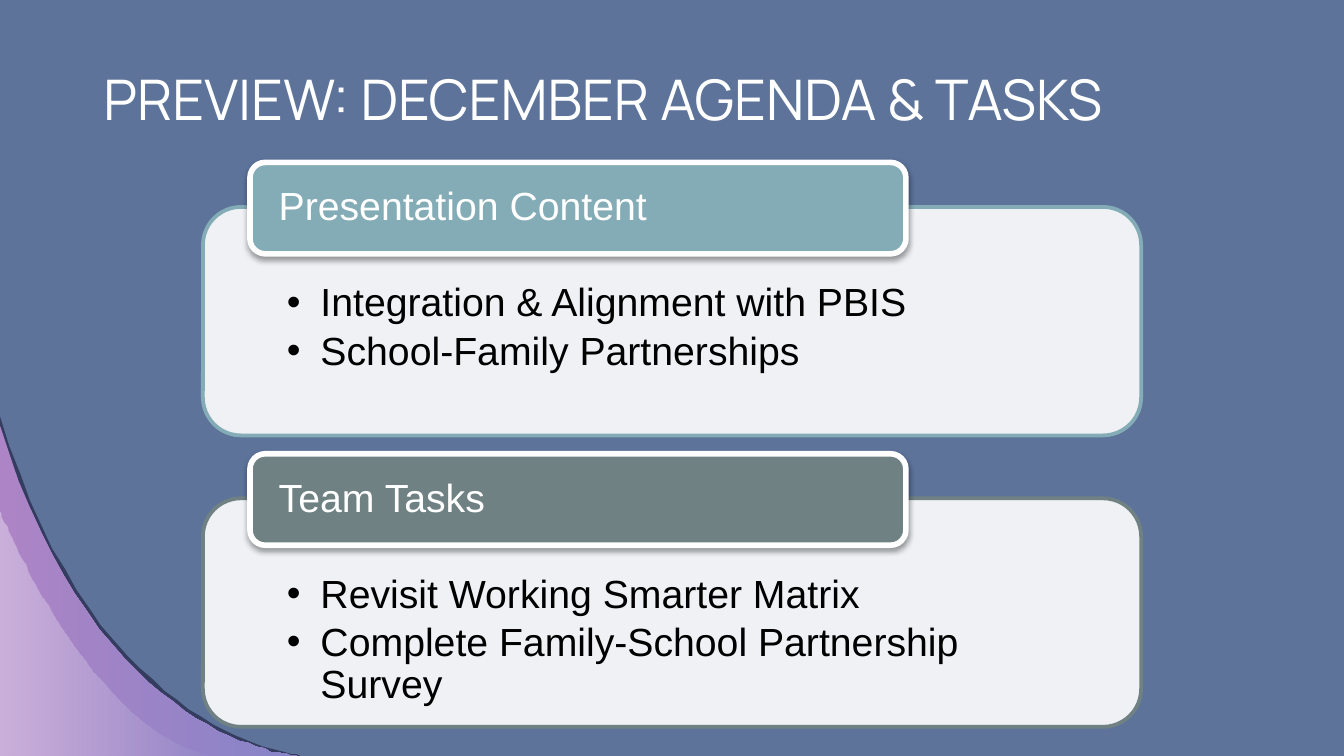
from dataclasses import dataclass

from lxml.etree import SubElement
from pptx import Presentation
from pptx.dml.color import RGBColor
from pptx.enum.shapes import MSO_SHAPE
from pptx.enum.text import MSO_ANCHOR, MSO_AUTO_SIZE, PP_ALIGN
from pptx.oxml.ns import qn
from pptx.util import Pt

COLORS = {
    "background": "5D739A", "navy": "12102F", "violet": "8784C7",
    "purple": "AD84C6", "white": "FFFFFF", "black": "000000",
    "teal": "84ACB6", "slate": "6F8183",
}
CARD_LEFT, CARD_WIDTH, CARD_HEIGHT = 108.7, 502.6, 122.4
TAB_LEFT, TAB_WIDTH, TAB_HEIGHT = 133.9, 351.4, 49
FIRST_CARD_TOP, TAB_RISE, PITCH = 110.9, 23.9, 156.1
LIST_INSET = 6.1
CURVE_STEPS = 32


@dataclass
class Swoosh:
    curve: list[tuple[float, float]]  # four Bezier control points
    colors: list[str]  # one for a solid fill, two for left to right
    opacities: list[int]


@dataclass
class Section:
    heading: str
    color: str
    items: list[str]


SWOOSHES = [
    Swoosh([(0, 223.2), (52.6, 398.9), (163.4, 404.6), (163.4, 405)],
           ["navy"], [54]),
    Swoosh([(0, 227.5), (51.8, 399.6), (159.1, 405), (159.1, 405)],
           ["purple", "violet"], [100, 100]),
    Swoosh([(0, 273.6), (0, 273.6), (49.7, 396.7), (116.6, 405)],
           ["white", "white"], [36, 0]),
]
SECTIONS = [
    Section("Presentation Content", "teal",
            ["Integration & Alignment with PBIS", "School-Family Partnerships"]),
    Section("Team Tasks", "slate",
            ["Revisit Working Smarter Matrix",
             "Complete Family-School Partnership Survey"]),
]


def rgb(name: str) -> RGBColor:
    return RGBColor.from_string(COLORS[name])


def set_opacities(shape, opacities: list[int]) -> None:
    """Apply opacity percentages to the fill colours, in order."""
    fill_colors = list(shape._element.spPr.iter(qn("a:srgbClr")))
    for color, opacity in zip(fill_colors, opacities):
        SubElement(color, qn("a:alpha"), val=str(opacity * 1000))


def place(shape, left: float, top: float, width: float, height: float) -> None:
    shape.left, shape.top = Pt(left), Pt(top)
    shape.width, shape.height = Pt(width), Pt(height)


def set_frame(frame, anchor: MSO_ANCHOR, left: float, top: float, bottom: float) -> None:
    frame.word_wrap = True
    frame.auto_size = MSO_AUTO_SIZE.NONE
    frame.vertical_anchor = anchor
    frame.margin_left = frame.margin_right = Pt(left)
    frame.margin_top, frame.margin_bottom = Pt(top), Pt(bottom)


def add_text(paragraph, text: str, size: float, font: str, color: str) -> None:
    paragraph.alignment = PP_ALIGN.LEFT
    run = paragraph.add_run()
    run.text = text
    run.font.size, run.font.name = Pt(size), font
    run.font.color.rgb = rgb(color)


def add_swoosh(slide, swoosh: Swoosh) -> None:
    points = []
    for step in range(CURVE_STEPS + 1):
        t = step / CURVE_STEPS
        weights = ((1 - t) ** 3, 3 * t * (1 - t) ** 2, 3 * t * t * (1 - t), t ** 3)
        points.append(tuple(sum(weight * point[axis] for weight, point
                                in zip(weights, swoosh.curve)) for axis in (0, 1)))
    builder = slide.shapes.build_freeform(*points[0], scale=Pt(1))
    builder.add_line_segments(points[1:] + [(0, 405)], close=True)
    shape = builder.convert_to_shape()
    shape.shadow.inherit = False
    if len(swoosh.colors) == 1:
        shape.fill.solid()
        shape.fill.fore_color.rgb = rgb(swoosh.colors[0])
    else:
        shape.fill.gradient()
        shape.fill.gradient_angle = 0
        for stop, color in zip(shape.fill.gradient_stops, swoosh.colors):
            stop.color.rgb = rgb(color)
    set_opacities(shape, swoosh.opacities)
    shape.line.fill.background()


def add_rounded_box(slide, box: tuple[float, float, float, float], fill: str,
                    line: str, line_width: float, opacity: int = 100):
    shape = slide.shapes.add_shape(MSO_SHAPE.ROUNDED_RECTANGLE, *map(Pt, box))
    shape.shadow.inherit = False
    shape.fill.solid()
    shape.fill.fore_color.rgb = rgb(fill)
    if opacity < 100:
        set_opacities(shape, [opacity])
    shape.line.color.rgb = rgb(line)
    shape.line.width = Pt(line_width)
    return shape


def add_drop_shadow(shape) -> None:
    effects = shape._element.spPr.find(qn("a:effectLst"))
    shadow = SubElement(effects, qn("a:outerShdw"), blurRad=str(Pt(3.1)),
                        dist=str(Pt(1.6)), dir="5400000", rotWithShape="0")
    color = SubElement(shadow, qn("a:srgbClr"), val=COLORS["black"])
    SubElement(color, qn("a:alpha"), val="38000")


def fill_list(placeholder, items: list[str]) -> None:
    frame = placeholder.text_frame
    set_frame(frame, MSO_ANCHOR.TOP, 38.9, 34.6, 11.5)
    for index, item in enumerate(items):
        paragraph = frame.add_paragraph() if index else frame.paragraphs[0]
        paragraph.level = 1
        properties = paragraph._p.get_or_add_pPr()
        properties.set("marL", str(Pt(18)))
        properties.set("indent", str(Pt(-18)))
        bullet_color = SubElement(properties, qn("a:buClr"))
        SubElement(bullet_color, qn("a:srgbClr"), val=COLORS["black"])
        SubElement(properties, qn("a:buChar"), char="•")
        paragraph.line_spacing = 0.9
        paragraph.space_before, paragraph.space_after = Pt(0), Pt(3.15)
        add_text(paragraph, item, 21, "Arial", "black")


def add_section(slide, section: Section, placeholder, top: float) -> None:
    # Card
    add_rounded_box(slide, (CARD_LEFT, top, CARD_WIDTH, CARD_HEIGHT),
                    "white", section.color, 2, opacity=90)
    # List, raised above its card
    place(placeholder, CARD_LEFT + LIST_INSET, top + LIST_INSET,
          CARD_WIDTH - 2 * LIST_INSET, CARD_HEIGHT - 2 * LIST_INSET)
    slide.shapes._spTree.append(placeholder._element)
    fill_list(placeholder, section.items)
    # Heading tab
    tab = add_rounded_box(slide, (TAB_LEFT, top - TAB_RISE, TAB_WIDTH, TAB_HEIGHT),
                          section.color, "white", 3)
    add_drop_shadow(tab)
    set_frame(tab.text_frame, MSO_ANCHOR.MIDDLE, 13, 0, 0)
    paragraph = tab.text_frame.paragraphs[0]
    paragraph.line_spacing = 0.9
    add_text(paragraph, section.heading, 21, "Arial", "white")


def main() -> None:
    presentation = Presentation()
    presentation.slide_width, presentation.slide_height = Pt(720), Pt(405)
    slide = presentation.slides.add_slide(presentation.slide_layouts[3])
    title, *lists = slide.placeholders

    # Background and corner decoration
    slide.background.fill.solid()
    slide.background.fill.fore_color.rgb = rgb("background")
    for swoosh in SWOOSHES:
        add_swoosh(slide, swoosh)

    # Sections
    for index, (section, placeholder) in enumerate(zip(SECTIONS, lists)):
        add_section(slide, section, placeholder, FIRST_CARD_TOP + index * PITCH)

    # Title
    place(title, 48.2, 27.4, 606.2, 49.7)
    slide.shapes._spTree.append(title._element)
    set_frame(title.text_frame, MSO_ANCHOR.TOP, 7.2, 7.2, 7.2)
    add_text(title.text_frame.paragraphs[0], "PREVIEW: DECEMBER AGENDA & TASKS",
             30, "Manrope", "white")

    presentation.save("out.pptx")


if __name__ == "__main__":
    main()
